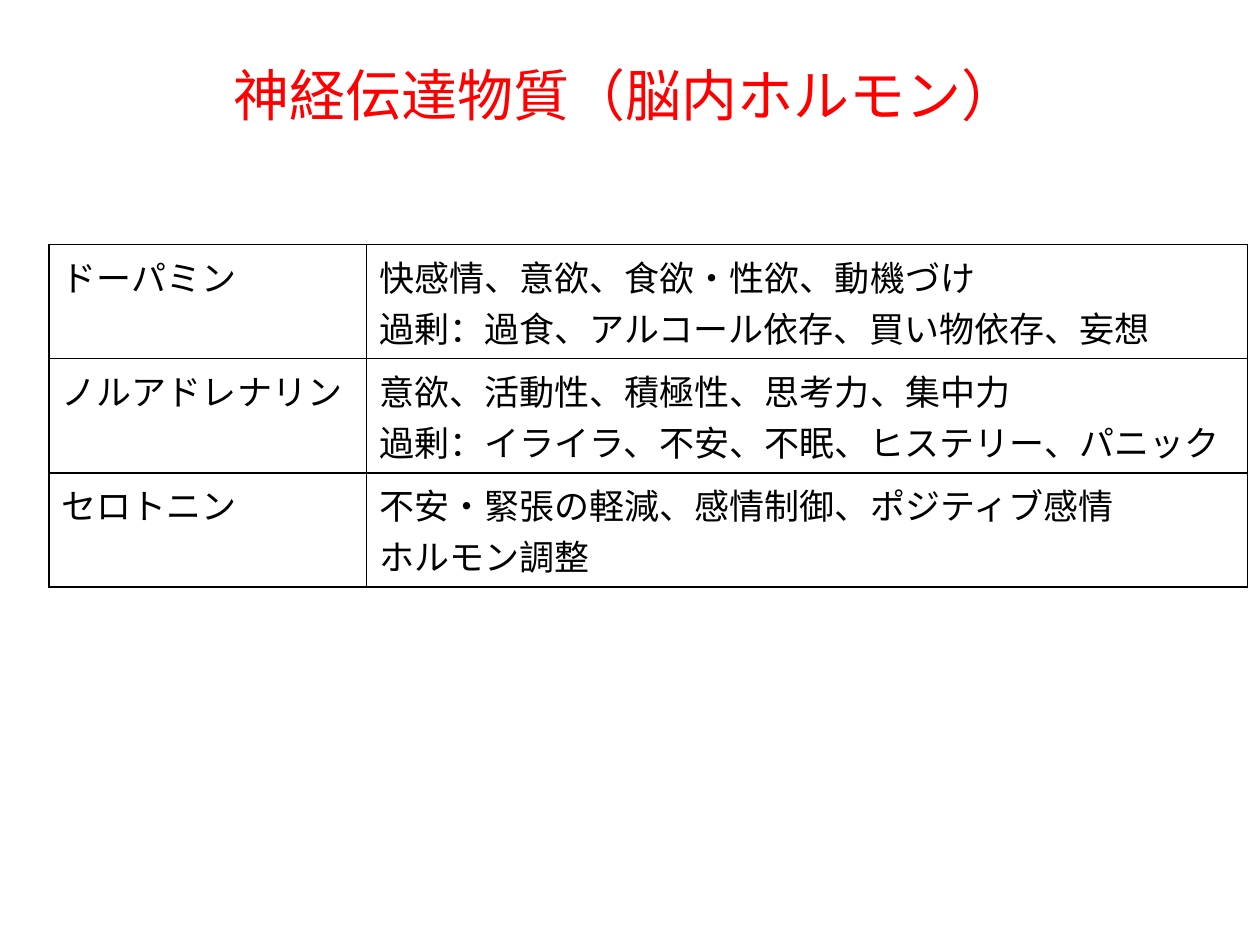
"""Build a slide with a table of neurotransmitters and their effects."""
import dataclasses

import lxml.etree
import pptx
import pptx.dml.color
import pptx.enum.text
import pptx.oxml.ns
import pptx.util

Inches = pptx.util.Inches
FONT = "Noto Sans CJK JP"
RED = pptx.dml.color.RGBColor(0xFF, 0x00, 0x00)
BLACK = pptx.dml.color.RGBColor(0x00, 0x00, 0x00)
COLUMN_WIDTHS = (2.52, 6.99)
ROW_HEIGHT = 0.41


@dataclasses.dataclass
class Transmitter:
    name: str
    effects: str


TRANSMITTERS = [
    Transmitter(
        "ドーパミン",
        "快感情、意欲、食欲・性欲、動機づけ\n過剰：過食、アルコール依存、買い物依存、妄想",
    ),
    Transmitter(
        "ノルアドレナリン",
        "意欲、活動性、積極性、思考力、集中力\n過剰：イライラ、不安、不眠、ヒステリー、パニック",
    ),
    Transmitter(
        "セロトニン",
        "不安・緊張の軽減、感情制御、ポジティブ感情\nホルモン調整",
    ),
]


def add_element(parent, tag: str, **attributes: str):
    return lxml.etree.SubElement(parent, pptx.oxml.ns.qn(tag), attributes)


def write_text(frame, text: str, size: int, color: pptx.dml.color.RGBColor) -> None:
    frame.text = text
    for para in frame.paragraphs:
        for span in para.runs:
            span.font.size = pptx.util.Pt(size)
            span.font.name = FONT
            span.font.color.rgb = color
            add_element(span.font._element, "a:ea", typeface=FONT)


def add_borders(cell) -> None:
    properties = cell._tc.get_or_add_tcPr()
    for side in ("a:lnL", "a:lnR", "a:lnT", "a:lnB"):
        line = add_element(properties, side, w=str(pptx.util.Pt(1)))
        add_element(add_element(line, "a:solidFill"), "a:srgbClr", val=str(BLACK))


def add_title(page) -> None:
    title = page.shapes.title
    title.left, title.top = Inches(0.47), Inches(0.39)
    title.width, title.height = Inches(9), Inches(0.72)
    write_text(title.text_frame, "神経伝達物質（脳内ホルモン）", 32, RED)
    title.text_frame.vertical_anchor = pptx.enum.text.MSO_ANCHOR.MIDDLE
    title.text_frame.paragraphs[0].alignment = pptx.enum.text.PP_ALIGN.CENTER


def add_transmitter_table(page, transmitters: list[Transmitter]) -> None:
    frame = page.shapes.add_table(
        len(transmitters), len(COLUMN_WIDTHS),
        Inches(0.39), Inches(1.94), Inches(sum(COLUMN_WIDTHS)), Inches(2.3),
    )
    table = frame.table
    table.first_row = table.horz_banding = False
    for column, width in zip(table.columns, COLUMN_WIDTHS):
        column.width = Inches(width)
    for row, transmitter in zip(table.rows, transmitters):
        row.height = Inches(ROW_HEIGHT)
        for cell, text in zip(row.cells, dataclasses.astuple(transmitter)):
            write_text(cell.text_frame, text, 20, BLACK)
            add_borders(cell)
            cell.fill.background()
    frame.height = Inches(2.3)


def main() -> None:
    deck = pptx.Presentation()
    deck.slide_width, deck.slide_height = Inches(10), Inches(7.5)
    page = deck.slides.add_slide(deck.slide_layouts.get_by_name("Title Only"))
    add_title(page)
    add_transmitter_table(page, TRANSMITTERS)
    deck.save("out.pptx")


if __name__ == "__main__":
    main()
